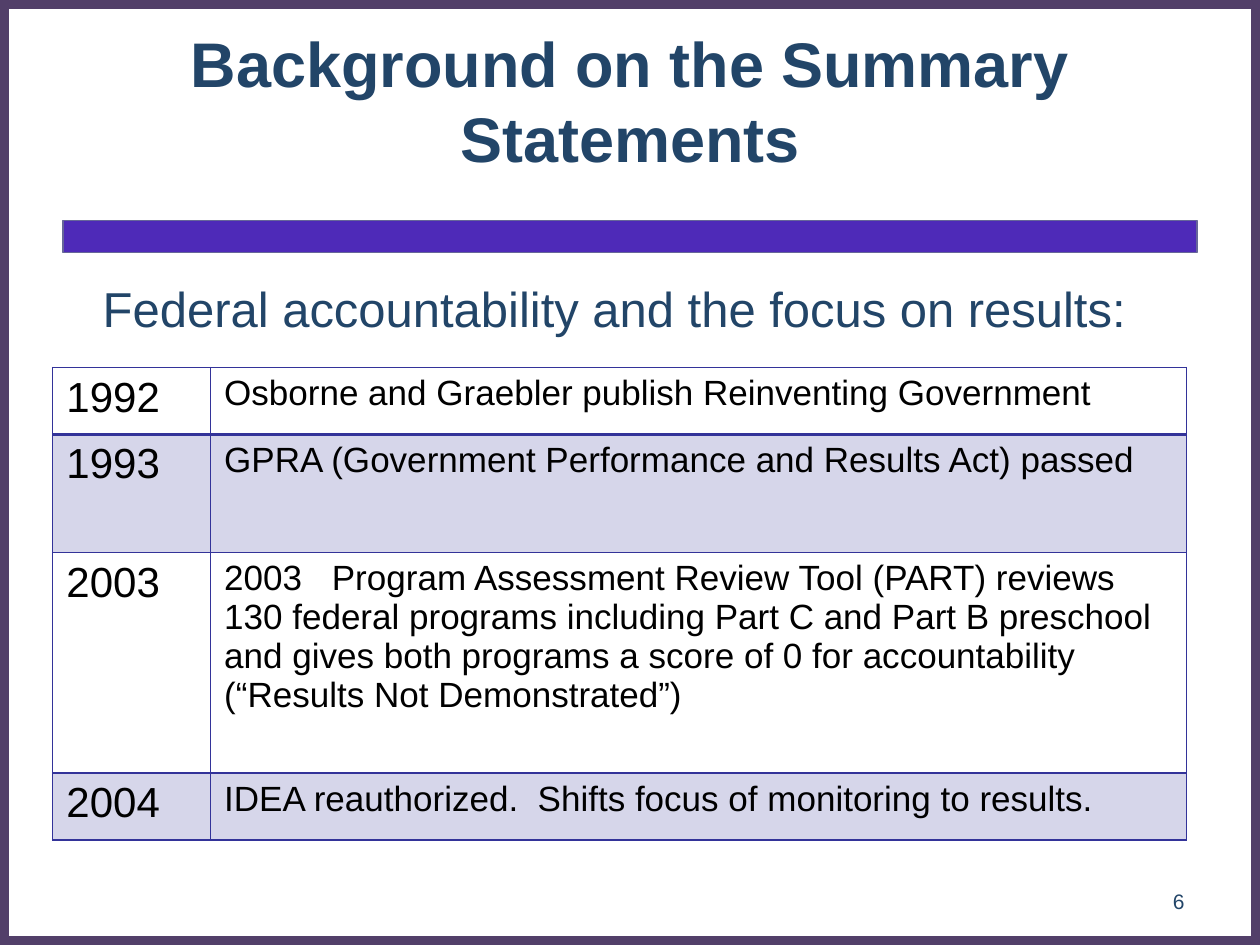
import pptx
import pptx.util
import pptx.dml.color
import pptx.enum.shapes
import pptx.enum.text
import pptx.oxml.ns
import lxml.etree

Cm, Pt = pptx.util.Cm, pptx.util.Pt
ALIGN = pptx.enum.text.PP_ALIGN
ANCHOR = pptx.enum.text.MSO_ANCHOR
qn = pptx.oxml.ns.qn

# Content
TITLE = "Background on the Summary Statements"
SUBTITLE = "Federal accountability and the focus on results:"
PAGE_NUMBER = "6"
EVENTS = [  # year, event, row height in cm
    ("1992", "Osborne and Graebler publish Reinventing Government", 1.35),
    ("1993", "GPRA (Government Performance and Results Act) passed", 2.38),
    ("2003", "2003\tProgram Assessment Review Tool (PART) reviews 130 federal "
     "programs including Part C and Part B preschool and gives both programs a "
     "score of 0 for accountability (“Results Not Demonstrated”)", 4.44),
    ("2004", "IDEA reauthorized.  Shifts focus of monitoring to results.", 1.35),
]
COLUMNS = [(3.18, 24), (19.68, 20)]  # width in cm, text size
TAB_STOP = Cm(2.17)
COLORS = {"frame": "523F69", "bar": "4E2AB8", "bar_line": "666699",
          "heading": "224568", "table": "333399", "text": "000000"}
FONT = "Arial"


def rgb(name):
    return pptx.dml.color.RGBColor.from_string(COLORS[name])


def format_text(text_frame, size, color, align, bold=False):
    for paragraph in text_frame.paragraphs:
        paragraph.alignment = align
        for run in paragraph.runs:
            run.font.name = FONT
            run.font.size = Pt(size)
            run.font.bold = bold
            run.font.color.rgb = rgb(color)


def add_rectangle(slide, box, fill, line, width):
    shape = slide.shapes.add_shape(pptx.enum.shapes.MSO_SHAPE.RECTANGLE, *box)
    shape.shadow.inherit = False
    if fill:
        shape.fill.solid()
        shape.fill.fore_color.rgb = rgb(fill)
    else:
        shape.fill.background()
    shape.line.color.rgb = rgb(line)
    shape.line.width = Pt(width)


def add_label(slide, box, text, size, align, anchor):
    text_frame = slide.shapes.add_textbox(*box).text_frame
    text_frame.word_wrap = True
    text_frame.vertical_anchor = anchor
    text_frame.text = text
    format_text(text_frame, size, "heading", align)


def add_border(cell, side, width):
    line = lxml.etree.SubElement(cell._tc.get_or_add_tcPr(), qn("a:ln" + side),
                                 w=str(Pt(width)))
    fill = lxml.etree.SubElement(line, qn("a:solidFill"))
    lxml.etree.SubElement(fill, qn("a:srgbClr"), val=COLORS["table"])


def fill_cell(cell, shaded):
    if not shaded:
        cell.fill.background()
        return
    cell.fill.solid()
    cell.fill.fore_color.rgb = rgb("table")
    color = cell._tc.tcPr.find(".//" + qn("a:solidFill") + "[last()]/" + qn("a:srgbClr"))
    color = cell._tc.tcPr.find(qn("a:solidFill")).find(qn("a:srgbClr"))
    lxml.etree.SubElement(color, qn("a:alpha"), val="20000")


def add_events_table(slide, left, top):
    width = sum(column[0] for column in COLUMNS)
    height = sum(event[2] for event in EVENTS)
    table = slide.shapes.add_table(len(EVENTS), len(COLUMNS), left, top,
                                   Cm(width), Cm(height)).table
    table.first_row = table.horz_banding = False
    for column, (column_width, _) in zip(table.columns, COLUMNS):
        column.width = Cm(column_width)
    for row_index, (*texts, row_height) in enumerate(EVENTS):
        table.rows[row_index].height = Cm(row_height)
        for column_index, text in enumerate(texts):
            cell = table.cell(row_index, column_index)
            cell.margin_left = cell.margin_right = Cm(0.28)
            cell.margin_top = cell.margin_bottom = Cm(0.13)
            cell.text_frame.text = text
            paragraph = cell.text_frame.paragraphs[0]
            if "\t" in text:
                tabs = lxml.etree.SubElement(paragraph._p.get_or_add_pPr(), qn("a:tabLst"))
                lxml.etree.SubElement(tabs, qn("a:tab"), pos=str(TAB_STOP), algn="l")
            paragraph.space_after = Pt(3)
            format_text(cell.text_frame, COLUMNS[column_index][1], "text", ALIGN.LEFT)
            # The rule under the first row is heavier
            for side in "LRTB":
                heavy = (row_index, side) in [(0, "B"), (1, "T")]
                add_border(cell, side, 2 if heavy else 1)
            fill_cell(cell, shaded=row_index % 2 == 1)


def main():
    presentation = pptx.Presentation()
    presentation.slide_width, presentation.slide_height = Cm(25.4), Cm(19.05)
    slide = presentation.slides.add_slide(presentation.slide_layouts[5])

    # Frame and divider bar
    add_rectangle(slide, (0, 0, Cm(25.4), Cm(19.05)), None, "frame", 10)
    add_rectangle(slide, (Cm(1.27), Cm(4.45), Cm(22.86), Cm(0.64)),
                  "bar", "bar_line", 0.75)

    # Title
    title = slide.shapes.title
    title.left, title.top, title.width, title.height = (
        Cm(1.48), Cm(0.42), Cm(22.44), Cm(3.18))
    title.text_frame.text = TITLE
    title.text_frame.auto_size = pptx.enum.text.MSO_AUTO_SIZE.NONE
    title.text_frame.vertical_anchor = ANCHOR.MIDDLE
    format_text(title.text_frame, 36, "heading", ALIGN.CENTER, bold=True)

    # Table, page number and subtitle
    add_events_table(slide, Cm(1.06), Cm(7.41))
    add_label(slide, (Cm(18.2), Cm(17.65), Cm(5.93), Cm(1.02)),
              PAGE_NUMBER, 12, ALIGN.RIGHT, ANCHOR.MIDDLE)
    add_label(slide, (Cm(1.48), Cm(5.5), Cm(21.8), Cm(1.45)),
              SUBTITLE, 28, ALIGN.CENTER, ANCHOR.TOP)

    presentation.save("out.pptx")


if __name__ == "__main__":
    main()
